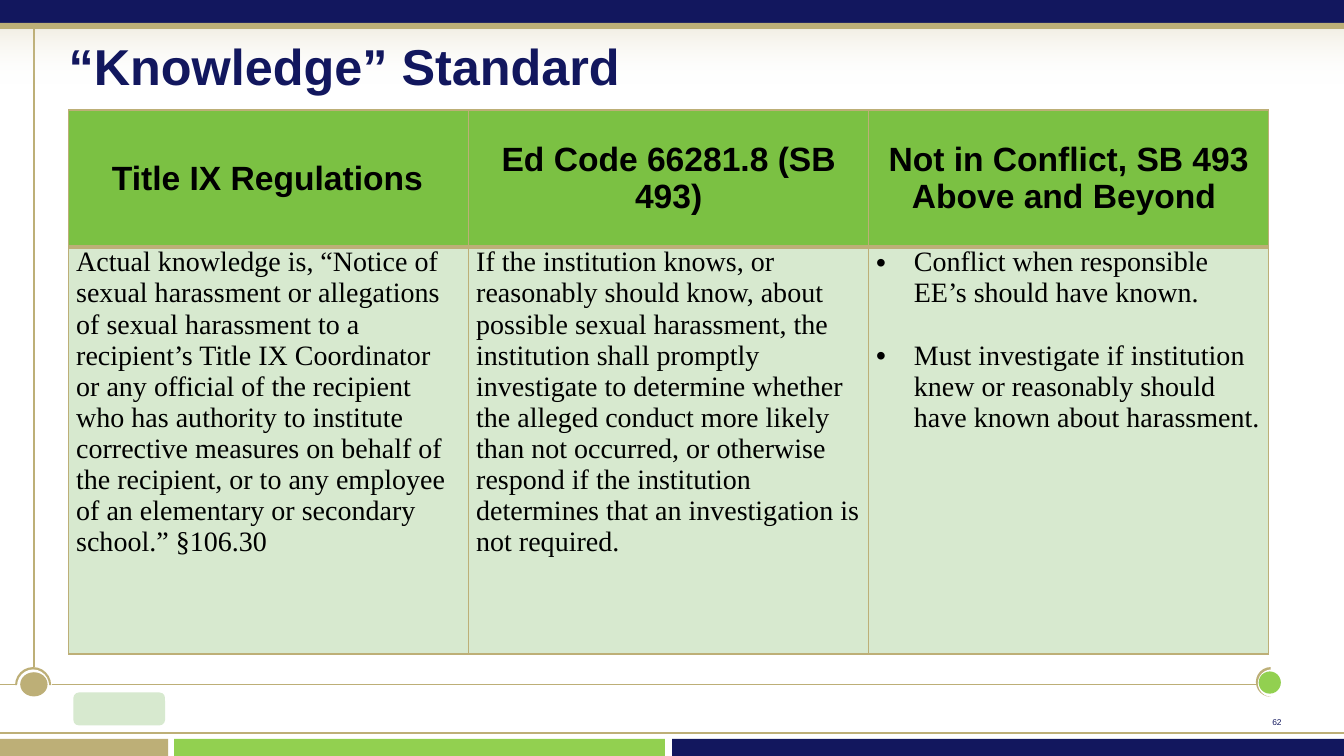
from lxml.etree import SubElement
from pptx import Presentation
from pptx.dml.color import RGBColor
from pptx.enum.shapes import MSO_CONNECTOR, MSO_SHAPE as Kind
from pptx.enum.text import MSO_ANCHOR as Anchor, MSO_AUTO_SIZE as AutoSize, PP_ALIGN as Align
from pptx.oxml.ns import qn
from pptx.util import Cm, Pt

COLORS = {"navy": "12175E", "tan": "BDAF77", "lime": "92D050", "white": "FFFFFF",
          "header": "7BC143", "body": "D7E9CF", "black": "000000"}
WIDTH = 33.87


def style_paragraph(paragraph, font_name, size, color, bold, align):
    paragraph.alignment = align
    for run in paragraph.runs:
        run.font.name = font_name
        run.font.size = Pt(size)
        run.font.bold = bold
        run.font.color.rgb = RGBColor.from_string(COLORS[color])


def add_border(cell, side, width):
    border = SubElement(cell._tc.get_or_add_tcPr(), qn(f"a:{side}"), w=str(Pt(width)))
    fill = SubElement(border, qn("a:solidFill"))
    SubElement(fill, qn("a:srgbClr"), val=COLORS["tan"])


presentation = Presentation()
presentation.slide_width = Cm(WIDTH)
presentation.slide_height = Cm(19.05)
slide = presentation.slides.add_slide(presentation.slide_layouts[5])
shapes = slide.shapes

rules = [
    (0.86, 16.81, 0.86, 0),
    (0, 17.25, 0.94, 17.25),
    (0, 18.47, WIDTH, 18.47),
    (1.3, 17.25, 31.65, 17.25),
]
for ends in rules:
    rule = shapes.add_connector(MSO_CONNECTOR.STRAIGHT, *map(Cm, ends))
    rule.line.color.rgb = RGBColor.from_string(COLORS["tan"])
    rule.line.width = Pt(1)
    SubElement(rule._element.spPr, qn("a:effectLst"))

glow = shapes.add_shape(Kind.RECTANGLE, 0, Cm(0.71), Cm(WIDTH), Cm(1.42))
glow.shadow.inherit = False
glow.line.fill.background()
glow.fill.gradient()
glow.fill.gradient_angle = 270
for stop, position, color in zip(glow.fill.gradient_stops, (0, 1), ("tan", "white")):
    stop.position = position
    stop.color.rgb = RGBColor.from_string(COLORS[color])
for color_element, alpha in zip(glow._element.spPr.iter(qn("a:srgbClr")), (20000, 0)):
    SubElement(color_element, qn("a:alpha"), val=str(alpha))

ornaments = [
    (Kind.RECTANGLE, 0, 0, WIDTH, 0.61, "navy"),
    (Kind.RECTANGLE, 0, 0.58, WIDTH, 0.15, "tan"),
    (Kind.RECTANGLE, 0, 18.62, 4.24, 0.43, "tan"),
    (Kind.RECTANGLE, 4.39, 18.62, 12.37, 0.43, "lime"),
    (Kind.RECTANGLE, 16.94, 18.62, 16.93, 0.43, "navy"),
    (Kind.ROUNDED_RECTANGLE, 1.85, 17.45, 2.31, 0.83, "body"),
    (Kind.BLOCK_ARC, 31.65, 16.81, 0.75, 0.75, "tan"),
    (Kind.OVAL, 31.7, 16.87, 0.69, 0.69, "white"),
    (Kind.OVAL, 31.72, 16.92, 0.56, 0.56, "lime"),
    (Kind.BLOCK_ARC, 0.38, 16.81, 0.91, 0.91, "tan"),
    (Kind.OVAL, 0.43, 16.87, 0.81, 0.84, "white"),
    (Kind.OVAL, 0.51, 16.94, 0.69, 0.61, "tan"),
]
for kind, left, top, width, height, color in ornaments:
    ornament = shapes.add_shape(kind, Cm(left), Cm(top), Cm(width), Cm(height))
    ornament.shadow.inherit = False
    ornament.fill.solid()
    ornament.fill.fore_color.rgb = RGBColor.from_string(COLORS[color])
    ornament.line.fill.background()
    if kind == Kind.BLOCK_ARC and left > WIDTH / 2:
        ornament.adjustments[0] = 54
        ornament.adjustments[1] = 162

title = shapes.title
shapes.element.append(title.element)
title.left, title.top, title.width, title.height = Cm(1.73), Cm(0.87), Cm(30.73), Cm(1.55)
title_frame = title.text_frame
title_frame.text = "“Knowledge” Standard"
title_frame.auto_size = AutoSize.NONE
title_frame.vertical_anchor = Anchor.BOTTOM
title_frame.margin_left = title_frame.margin_right = 0
title_frame.margin_top = title_frame.margin_bottom = 0
style_paragraph(title_frame.paragraphs[0], "Arial", 36, "navy", True, Align.LEFT)

columns = [
    ("Title IX Regulations", [
        "Actual knowledge is, “Notice of sexual harassment or allegations of sexual harassment to a "
        "recipient’s Title IX Coordinator or any official of the recipient who has authority to "
        "institute corrective measures on behalf of the recipient, or to any employee of an "
        "elementary or secondary",
        "school.” §106.30"]),
    ("Ed Code 66281.8 (SB 493)", [
        "If the institution knows, or reasonably should know, about possible sexual harassment, the "
        "institution shall promptly investigate to determine whether the alleged conduct more likely "
        "than not occurred, or otherwise respond if the institution determines that an investigation "
        "is not required."]),
    ("Not in Conflict, SB 493 Above and Beyond ", [
        "Conflict when responsible EE’s should have known.",
        "Must investigate if institution knew or reasonably should have known about harassment."]),
]
table = shapes.add_table(2, 3, Cm(1.73), Cm(2.77), Cm(30.24), Cm(13.71)).table
table.rows[0].height = Cm(3.45)
table.rows[1].height = Cm(10.26)
for index, (heading, body) in enumerate(columns):
    table.columns[index].width = Cm(10.08)
    for row, texts in enumerate(([heading], body)):
        cell = table.cell(row, index)
        cell.text_frame.text = "\n".join(texts)
        cell.vertical_anchor = Anchor.TOP if row else Anchor.MIDDLE
        cell.margin_left = Cm(0.19)
        cell.margin_right = Cm(0.19 if index else 0.25)
        cell.margin_top = cell.margin_bottom = 0
        for side in ("lnL", "lnR", "lnT", "lnB"):
            shared = (row, side) in ((0, "lnB"), (1, "lnT"))
            add_border(cell, side, 3 if shared else 1)
        cell.fill.solid()
        cell.fill.fore_color.rgb = RGBColor.from_string(COLORS["body" if row else "header"])
        for number, paragraph in enumerate(cell.text_frame.paragraphs):
            if row and index == 2:
                properties = paragraph._p.get_or_add_pPr()
                properties.set("marL", str(Cm(0.95)))
                properties.set("indent", str(-Cm(0.95)))
                if number:
                    paragraph.space_before = Pt(22.3)
                SubElement(properties, qn("a:buFont"), typeface="Arial")
                SubElement(properties, qn("a:buChar"), char="•")
            if row:
                style_paragraph(paragraph, "Times New Roman", 20, "black", False, Align.LEFT)
            else:
                style_paragraph(paragraph, "Arial", 24, "black", True, Align.CENTER)

page_number = shapes.add_textbox(Cm(31.68), Cm(17.98), Cm(1), Cm(0.43))
page_frame = page_number.text_frame
page_frame.text = "62"
page_frame.word_wrap = True
page_frame.vertical_anchor = Anchor.MIDDLE
page_frame.margin_left = page_frame.margin_right = 0
page_frame.margin_top = page_frame.margin_bottom = 0
style_paragraph(page_frame.paragraphs[0], "Arial", 6, "navy", False, Align.CENTER)

presentation.save("out.pptx")
